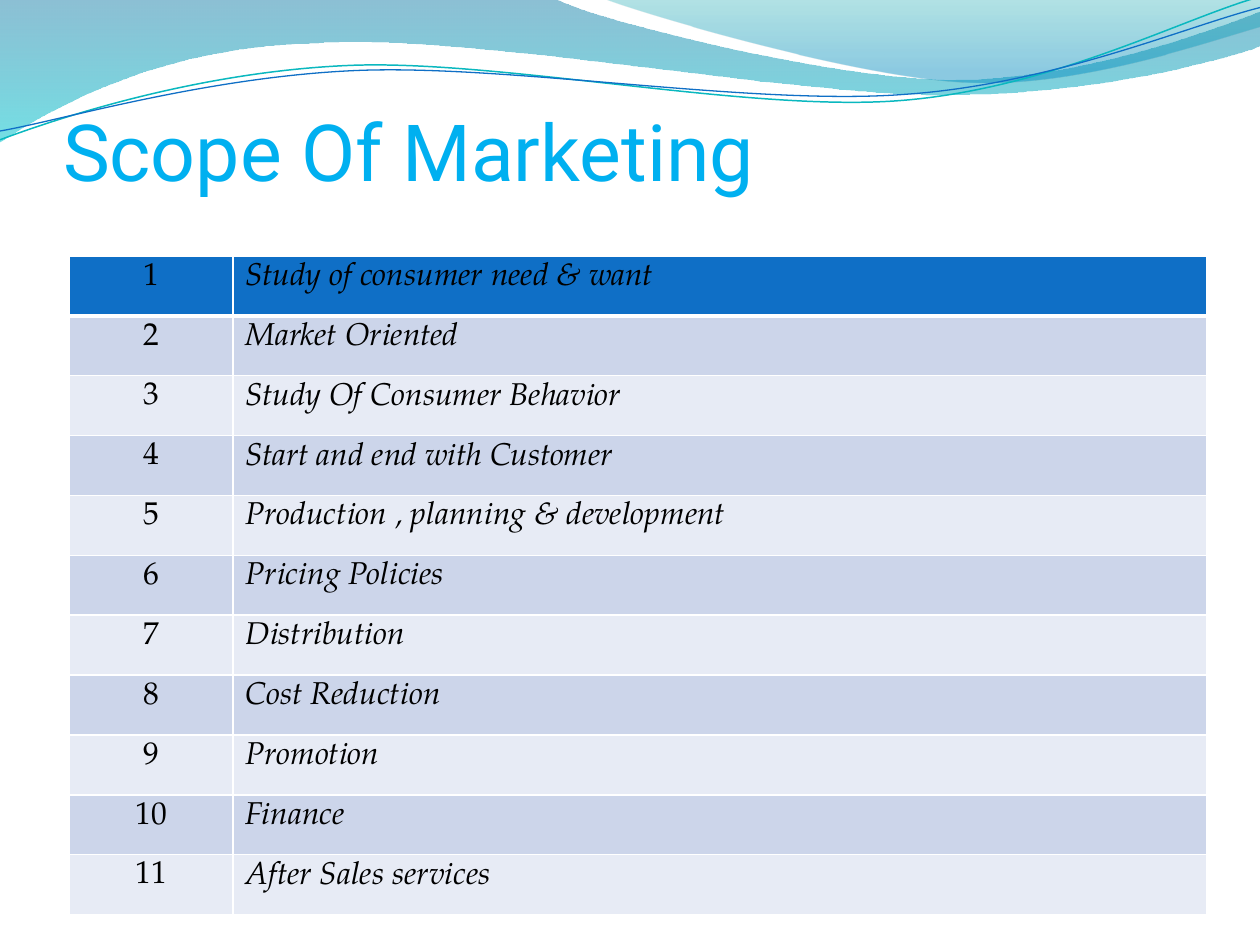
from lxml.etree import SubElement
from pptx import Presentation
from pptx.dml.color import RGBColor
from pptx.enum.text import MSO_ANCHOR, MSO_AUTO_SIZE, PP_ALIGN
from pptx.oxml.ns import qn
from pptx.util import Cm, Pt

BLACK = RGBColor(0x00, 0x00, 0x00)
WHITE = RGBColor(0xFF, 0xFF, 0xFF)
SKY = RGBColor(0x00, 0xB0, 0xF0)
BLUE = RGBColor(0x0F, 0x6F, 0xC6)
TEAL = RGBColor(0x0A, 0xB8, 0xBF)
BAND_DARK = RGBColor(0xCC, 0xD5, 0xEA)
BAND_LIGHT = RGBColor(0xE7, 0xEB, 0xF5)
WAVE_TOP = RGBColor(0x00, 0x74, 0xA1)
WAVE_BOTTOM = RGBColor(0x00, 0xC6, 0xCF)
CREST_TOP = RGBColor(0x00, 0xA1, 0xA9)
CREST_BOTTOM = RGBColor(0x00, 0x8B, 0xBF)

HUNDREDTH_INCH = Cm(0.0254)

WAVE = [
    [(0, 0)],
    [(440, -1)],
    [(476, 17), (664, 63), (758, 63)],
    [(853, 63), (958, 26), (1000, 9)],
    [(1001, 36)],
    [(983, 44), (870, 76), (746, 75)],
    [(622, 75), (382, 28), (257, 34)],
    [(129, 36), (46, 83), (-1, 113)],
]
CREST = [
    [(479, -1)],
    [(509, 11), (682, 62), (769, 65)],
    [(856, 69), (961, 32), (1000, 21)],
    [(1000, 0)],
]
TEAL_CURVE = [
    [(0, 111)],
    [(48, 93), (158, 57), (277, 52)],
    [(395, 47), (593, 89), (713, 80)],
    [(833, 71), (938, 15), (998, -2)],
]
BLUE_CURVE = [
    [(0, 104)],
    [(47, 96), (164, 61), (283, 56)],
    [(403, 51), (597, 84), (717, 75)],
    [(836, 67), (941, 21), (1000, 6)],
]

TOPICS = [
    "Study of consumer need & want",
    "Market Oriented",
    "Study Of Consumer Behavior",
    "Start and end with Customer",
    "Production , planning & development",
    "Pricing Policies",
    "Distribution",
    "Cost Reduction",
    "Promotion",
    "Finance",
    "After Sales services",
]


def write(tf, text, font, size, color, italic=False, align=PP_ALIGN.LEFT):
    p = tf.paragraphs[0]
    p.alignment = align
    r = p.add_run()
    r.text = text
    r.font.name = font
    r.font.size = Pt(size)
    r.font.color.rgb = color
    r.font.bold = False
    r.font.italic = italic


def set_border(cell, side, color, width):
    tc_pr = cell._tc.get_or_add_tcPr()
    ln = SubElement(tc_pr, qn(f"a:ln{side}"), w=str(Pt(width)))
    fill = SubElement(ln, qn("a:solidFill"))
    SubElement(fill, qn("a:srgbClr"), val=str(color))


class SlideBuilder:
    title_font = "Roboto"
    body_font = "TeX Gyre Pagella"

    def __init__(self, prs):
        self.s = prs.slides.add_slide(prs.slide_layouts[5])

    def outline(self, segments, close):
        start, *rest = segments
        points = [point for segment in rest for point in segment]
        builder = self.s.shapes.build_freeform(*start[0], scale=HUNDREDTH_INCH)
        builder.add_line_segments(points, close=close)
        sp = builder.convert_to_shape()
        sp.shadow.inherit = False
        lines = iter(list(sp._element.iter(qn("a:lnTo"))))
        for segment in rest:
            first, *others = [next(lines) for _ in segment]
            if others:
                curve = first.makeelement(qn("a:cubicBezTo"))
                first.addprevious(curve)
                for line in (first, *others):
                    curve.append(line[0])
                    line.getparent().remove(line)
        return sp

    def gradient_wave(self, segments, stops):
        sp = self.outline(segments, close=True)
        sp.line.fill.background()
        sp.fill.gradient()
        sp.fill.gradient_angle = 270
        for stop, (position, color, _) in zip(sp.fill.gradient_stops, stops):
            stop.position = position
            stop.color.rgb = color
        grad = sp._element.spPr.find(qn("a:gradFill"))
        for clr, (_, _, opacity) in zip(grad.iter(qn("a:srgbClr")), stops):
            SubElement(clr, qn("a:alpha"), val=str(opacity * 1000))

    def curve(self, segments, color, width):
        sp = self.outline(segments, close=False)
        sp.fill.background()
        sp.line.color.rgb = color
        sp.line.width = Pt(width)

    def title(self, text):
        sp = self.s.shapes.title
        self.s.shapes._spTree.append(sp._element)
        sp.left, sp.top = Cm(1.27), Cm(1.96)
        sp.width, sp.height = Cm(22.86), Cm(2.01)
        tf = sp.text_frame
        tf.word_wrap = True
        tf.auto_size = MSO_AUTO_SIZE.NONE
        tf.vertical_anchor = MSO_ANCHOR.BOTTOM
        tf.margin_left = tf.margin_right = tf.margin_bottom = 0
        tf.margin_top = Cm(0.13)
        write(tf, text, self.title_font, 45, SKY)

    def cell(self, cell, row, text, **fmt):
        for side in "LRTB":
            header_rule = (row, side) in ((0, "B"), (1, "T"))
            set_border(cell, side, WHITE, 3 if header_rule else 1)
        cell.fill.solid()
        band = BAND_DARK if row % 2 else BAND_LIGHT
        cell.fill.fore_color.rgb = band if row else BLUE
        write(cell.text_frame, text, self.body_font, 18, BLACK, **fmt)

    def numbered_table(self, topics):
        widths = Cm(3.3), Cm(19.63)
        frame = self.s.shapes.add_table(
            len(topics), 2, Cm(1.4), Cm(5.16), sum(widths), Cm(13.28))
        table = frame.table
        for column, width in zip(table.columns, widths):
            column.width = width
        for row, topic in enumerate(topics):
            self.cell(table.cell(row, 0), row, str(row + 1), align=PP_ALIGN.CENTER)
            self.cell(table.cell(row, 1), row, topic, italic=True)


def main():
    prs = Presentation()
    prs.slide_width, prs.slide_height = Cm(25.4), Cm(19.05)
    builder = SlideBuilder(prs)
    builder.gradient_wave(WAVE, [(0, WAVE_TOP, 45), (1, WAVE_BOTTOM, 55)])
    builder.gradient_wave(CREST, [(0, CREST_TOP, 30), (0.8, CREST_BOTTOM, 45)])
    builder.curve(TEAL_CURVE, TEAL, 0.85)
    builder.curve(BLUE_CURVE, BLUE, 0.75)
    builder.title("Scope Of Marketing")
    builder.numbered_table(TOPICS)
    prs.save("out.pptx")


if __name__ == "__main__":
    main()
